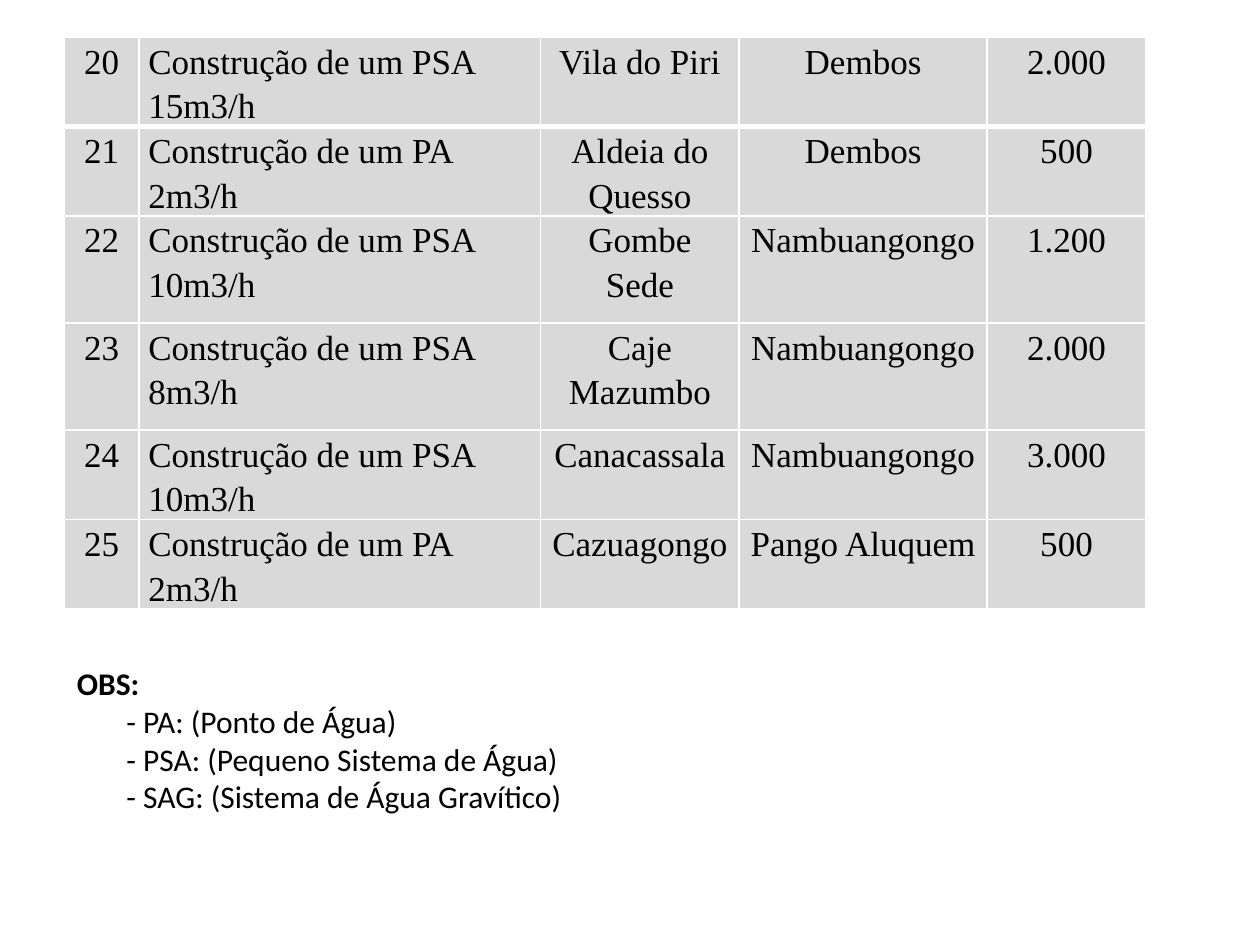
"""Build the slide listing water works 20 to 25, with a key to the short forms."""
from dataclasses import dataclass

from lxml import etree
from pptx import Presentation
from pptx.dml.color import RGBColor
from pptx.enum import text as tx
from pptx.oxml import ns
from pptx.util import Cm, Pt

LEFT, MID = tx.PP_ALIGN.LEFT, tx.PP_ALIGN.CENTER


@dataclass(frozen=True)
class Theme:
    ink: str = "000000"
    fill: str = "D9D9D9"
    rule: str = "FFFFFF"
    serif: str = "Times New Roman"
    sans: str = "Calibri"
    cell: int = 20
    note: int = 18
    thin: int = 1
    thick: int = 3


@dataclass(frozen=True)
class Work:
    num: str
    job: str
    place: str
    town: str
    cost: str
    tall: float = 1.79


@dataclass(frozen=True)
class Col:
    name: str
    wide: float
    align: tx.PP_ALIGN = MID


LOOK = Theme()
COLS = [Col("num", 1.5), Col("job", 8.1, LEFT), Col("place", 4),
        Col("town", 5), Col("cost", 3.2)]
PSA, PA = "Construção de um PSA ", "Construção de um PA "
WORKS = [
    Work("20", PSA + "15m3/h", "Vila do Piri", "Dembos", "2.000"),
    Work("21", PA + "2m3/h", "Aldeia do Quesso", "Dembos", "500"),
    Work("22", PSA + "10m3/h", "Gombe Sede", "Nambuangongo", "1.200", 2.16),
    Work("23", PSA + "8m3/h", "Caje Mazumbo", "Nambuangongo", "2.000", 2.16),
    Work("24", PSA + "10m3/h", "Canacassala", "Nambuangongo", "3.000"),
    Work("25", PA + "2m3/h", "Cazuagongo", "Pango Aluquem", "500"),
]
NOTES = ["- PA: (Ponto de Água)", "- PSA: (Pequeno Sistema de Água)",
         "- SAG: (Sistema de Água Gravítico)"]


def put(para, words: str, *, font: str, size: int, bold: bool = False,
        align: tx.PP_ALIGN = LEFT, space: float = 1.0, dent: float = 0) -> None:
    """Write words into a paragraph with the given format."""
    para.alignment, para.line_spacing = align, space
    if dent:
        para._p.get_or_add_pPr().set("marL", str(Cm(dent)))
    run = para.add_run()
    run.text = words
    run.font.name, run.font.size, run.font.bold = font, Pt(size), bold
    run.font.color.rgb = RGBColor.from_string(LOOK.ink)


def edge(cell, top: int, base: int) -> None:
    """Draw the four borders of a cell."""
    props = cell._tc.get_or_add_tcPr()
    sides = {"L": LOOK.thin, "R": LOOK.thin, "T": top, "B": base}
    for spot, (side, wide) in enumerate(sides.items()):
        line = etree.Element(ns.qn(f"a:ln{side}"), w=str(Pt(wide)))
        fill = etree.SubElement(line, ns.qn("a:solidFill"))
        etree.SubElement(fill, ns.qn("a:srgbClr"), val=LOOK.rule)
        props.insert(spot, line)


def grid(slide, works: list[Work]) -> None:
    """Draw the table of works."""
    wide, tall = sum(c.wide for c in COLS), sum(w.tall for w in works)
    table = slide.shapes.add_table(len(works), len(COLS), Cm(1.3), Cm(0.75),
                                   Cm(wide), Cm(tall)).table
    table.first_row = table.horz_banding = False
    for col, spec in zip(table.columns, COLS):
        col.width = Cm(spec.wide)
    for r, work in enumerate(works):
        table.rows[r].height = Cm(work.tall)
        for c, col in enumerate(COLS):
            cell = table.cell(r, c)
            cell.margin_left = cell.margin_right = Cm(0.19)
            cell.margin_top = cell.margin_bottom = 0
            cell.fill.solid()
            cell.fill.fore_color.rgb = RGBColor.from_string(LOOK.fill)
            edge(cell, LOOK.thick if r == 1 else LOOK.thin,
                 LOOK.thick if r == 0 else LOOK.thin)
            put(cell.text_frame.paragraphs[0], getattr(work, col.name),
                font=LOOK.serif, size=LOOK.cell, align=col.align, space=1.15)


def key(slide, head: str, notes: list[str]) -> None:
    """Write the key to the short forms."""
    box = slide.shapes.add_textbox(Cm(1.3), Cm(13.26), Cm(13.2), Cm(4.88))
    frame = box.text_frame
    frame.word_wrap = True
    put(frame.paragraphs[0], head, font=LOOK.sans, size=LOOK.note, bold=True)
    for note in notes:
        put(frame.add_paragraph(), note, font=LOOK.sans, size=LOOK.note, dent=1)


def main() -> None:
    """Build and save the slide."""
    deck = Presentation()
    deck.slide_width, deck.slide_height = Cm(25.4), Cm(19.05)
    slide = deck.slides.add_slide(deck.slide_layouts[6])
    grid(slide, WORKS)
    key(slide, "OBS:", NOTES)
    deck.save("out.pptx")


if __name__ == "__main__":
    main()
